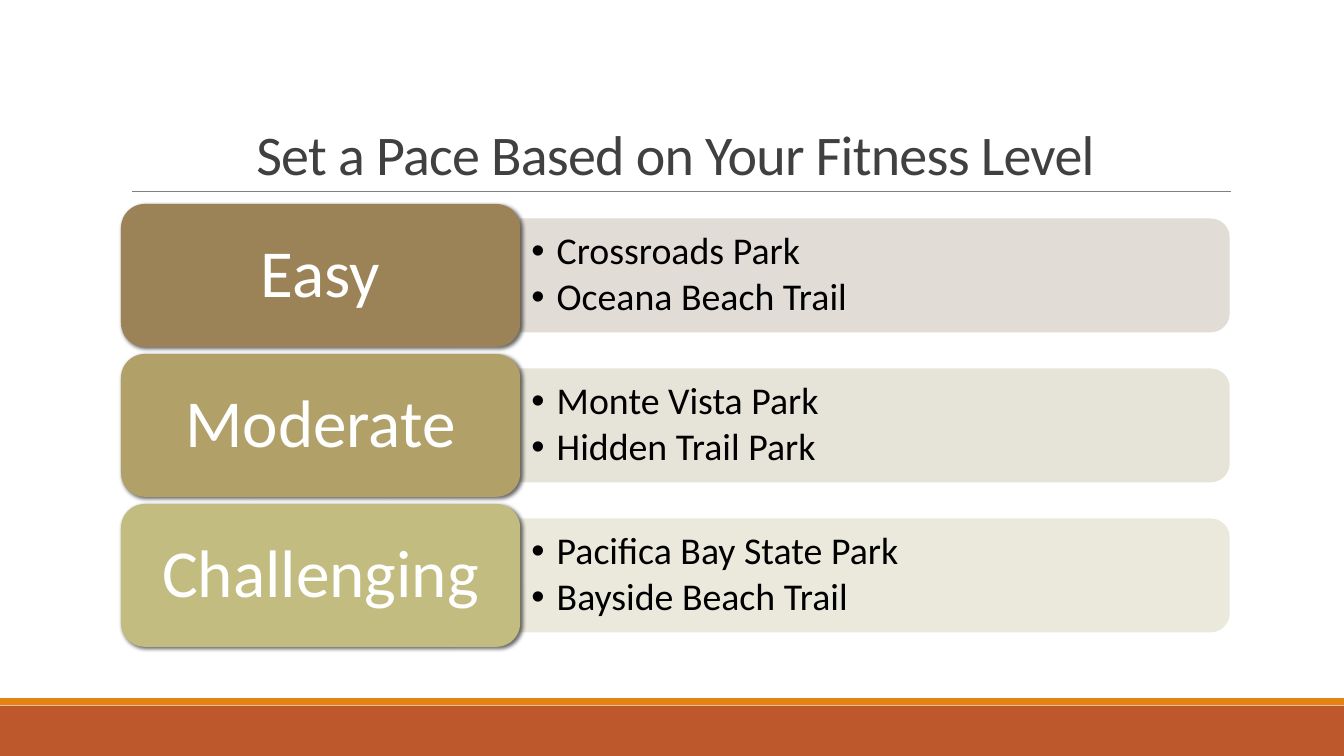
from dataclasses import dataclass

from lxml.etree import SubElement
from pptx import Presentation
from pptx.dml.color import RGBColor
from pptx.enum.shapes import MSO_CONNECTOR, MSO_SHAPE
from pptx.enum.text import MSO_ANCHOR, MSO_AUTO_SIZE, PP_ALIGN
from pptx.oxml.ns import qn
from pptx.util import Cm, Pt


@dataclass(frozen=True)
class Theme:
    font: str = "Calibri"
    title_size: float = 40
    level_size: float = 48
    trail_size: float = 27
    title_color: str = "404040"
    trail_color: str = "000000"
    level_color: str = "FFFFFF"
    rule_color: str = "808080"
    base_color: str = "BD582C"
    stripe_color: str = "E48312"
    shadow_color: str = "000000"


LEVELS = [
    ("Easy", ["Crossroads Park", "Oceana Beach Trail"], "9B8357", "DED9D1"),
    ("Moderate", ["Monte Vista Park", "Hidden Trail Park"], "B1A169", "E4E0D4"),
    ("Challenging", ["Pacifica Bay State Park", "Bayside Beach Trail"], "C2BC80", "E9E7D8"),
]
LIST_PLACEHOLDERS = (1, 2, 4)
SLIDE_WIDTH, SLIDE_HEIGHT = 33.87, 19.05
LEVEL_LEFT, LEVEL_TOP, LEVEL_WIDTH, LEVEL_HEIGHT = 3.05, 5.14, 10.06, 3.6
LEVEL_PITCH = 3.78
PANEL_LEFT, PANEL_WIDTH, PANEL_HEIGHT = 13.11, 17.88, 2.87
LIST_WIDTH, LIST_HEIGHT = 17.73, 2.59


class PaceSlide:
    def __init__(self, deck, theme):
        self.theme = theme
        self.slide = deck.slides.add_slide(deck.slide_layouts.get_by_name("Comparison"))
        self.holders = {h.placeholder_format.idx: h for h in self.slide.placeholders}

    def place(self, shape, left, top, width, height):
        shape.left, shape.top = Cm(left), Cm(top)
        shape.width, shape.height = Cm(width), Cm(height)

    def frame(self, shape, anchor, side, edge):
        frame = shape.text_frame
        frame.word_wrap = True
        frame.auto_size = MSO_AUTO_SIZE.NONE
        frame.vertical_anchor = anchor
        frame.margin_left = frame.margin_right = Cm(side)
        frame.margin_top = frame.margin_bottom = Cm(edge)
        return frame

    def style(self, paragraph, size, color, align, spacing, after=0):
        paragraph.alignment = align
        paragraph.line_spacing = spacing
        paragraph.space_before = Pt(0)
        paragraph.space_after = Pt(after)
        font = paragraph.font
        font.name, font.size, font.bold = self.theme.font, Pt(size), False
        font.color.rgb = RGBColor.from_string(color)

    def block(self, kind, left, top, width, height, color):
        shape = self.slide.shapes.add_shape(kind, Cm(left), Cm(top), Cm(width), Cm(height))
        shape.shadow.inherit = False
        shape.fill.solid()
        shape.fill.fore_color.rgb = RGBColor.from_string(color)
        shape.line.fill.background()
        return shape

    def rule(self, left, right, top):
        line = self.slide.shapes.add_connector(
            MSO_CONNECTOR.STRAIGHT, Cm(left), Cm(top), Cm(right), Cm(top))
        line.line.color.rgb = RGBColor.from_string(self.theme.rule_color)
        line.line.width = Pt(0.5)
        SubElement(line.element.spPr, qn("a:effectLst"))

    def title(self, text):
        heading = self.slide.shapes.title
        self.place(heading, 3.05, 0.79, 27.94, 4.04)
        frame = self.frame(heading, MSO_ANCHOR.BOTTOM, 0.25, 0.13)
        frame.text = text
        paragraph = frame.paragraphs[0]
        self.style(paragraph, self.theme.title_size, self.theme.title_color,
                   PP_ALIGN.CENTER, 0.85)
        paragraph.runs[0].font._element.set("spc", "-50")

    def panel(self, middle, color):
        center = PANEL_LEFT + PANEL_WIDTH / 2
        panel = self.block(MSO_SHAPE.ROUND_2_SAME_RECTANGLE, center - PANEL_HEIGHT / 2,
                           middle - PANEL_WIDTH / 2, PANEL_HEIGHT, PANEL_WIDTH, color)
        panel.rotation = 90
        tint = panel.element.spPr.find(f"{qn('a:solidFill')}/{qn('a:srgbClr')}")
        SubElement(tint, qn("a:alpha"), val="90000")

    def trails(self, idx, middle, names):
        trails = self.holders[idx]
        trails.element.getparent().append(trails.element)
        self.place(trails, PANEL_LEFT, middle - LIST_HEIGHT / 2, LIST_WIDTH, LIST_HEIGHT)
        frame = self.frame(trails, MSO_ANCHOR.MIDDLE, 0.28, 0.15)
        frame.text = "\n".join(names)
        for paragraph in frame.paragraphs:
            self.style(paragraph, self.theme.trail_size, self.theme.trail_color,
                       PP_ALIGN.LEFT, 0.9, 4)
            properties = paragraph._p.get_or_add_pPr()
            properties.set("marL", str(Cm(0.64)))
            properties.set("indent", str(-Cm(0.64)))
            bullet = properties.makeelement(qn("a:buChar"), {"char": "•"})
            properties.find(qn("a:defRPr")).addprevious(bullet)

    def level(self, top, name, color):
        level = self.block(MSO_SHAPE.ROUNDED_RECTANGLE, LEVEL_LEFT, top,
                           LEVEL_WIDTH, LEVEL_HEIGHT, color)
        effects = level.element.spPr.find(qn("a:effectLst"))
        shadow = SubElement(effects, qn("a:outerShdw"), blurRad=str(Pt(3)),
                            dist=str(Pt(2)), dir="2700000", algn="br", rotWithShape="0")
        tint = SubElement(shadow, qn("a:srgbClr"), val=self.theme.shadow_color)
        SubElement(tint, qn("a:alpha"), val="60000")
        frame = self.frame(level, MSO_ANCHOR.MIDDLE, 0.51, 0.25)
        frame.text = name
        self.style(frame.paragraphs[0], self.theme.level_size, self.theme.level_color,
                   PP_ALIGN.CENTER, 0.9, 16.8)

    def remove_unused(self):
        for idx, holder in self.holders.items():
            if idx not in (0, *LIST_PLACEHOLDERS):
                holder.element.getparent().remove(holder.element)


def main():
    deck = Presentation()
    deck.slide_width, deck.slide_height = Cm(SLIDE_WIDTH), Cm(SLIDE_HEIGHT)
    theme = Theme()
    page = PaceSlide(deck, theme)
    page.remove_unused()
    page.block(MSO_SHAPE.RECTANGLE, 0, 17.78, SLIDE_WIDTH, 1.27, theme.base_color)
    page.block(MSO_SHAPE.RECTANGLE, 0, 17.59, SLIDE_WIDTH, 0.18, theme.stripe_color)
    page.rule(3.33, 31.01, 4.83)
    page.title("Set a Pace Based on Your Fitness Level")
    for row, (name, trails, level_color, panel_color) in enumerate(LEVELS):
        top = LEVEL_TOP + row * LEVEL_PITCH
        middle = top + LEVEL_HEIGHT / 2
        page.panel(middle, panel_color)
        page.trails(LIST_PLACEHOLDERS[row], middle, trails)
        page.level(top, name, level_color)
    deck.save("out.pptx")


if __name__ == "__main__":
    main()
